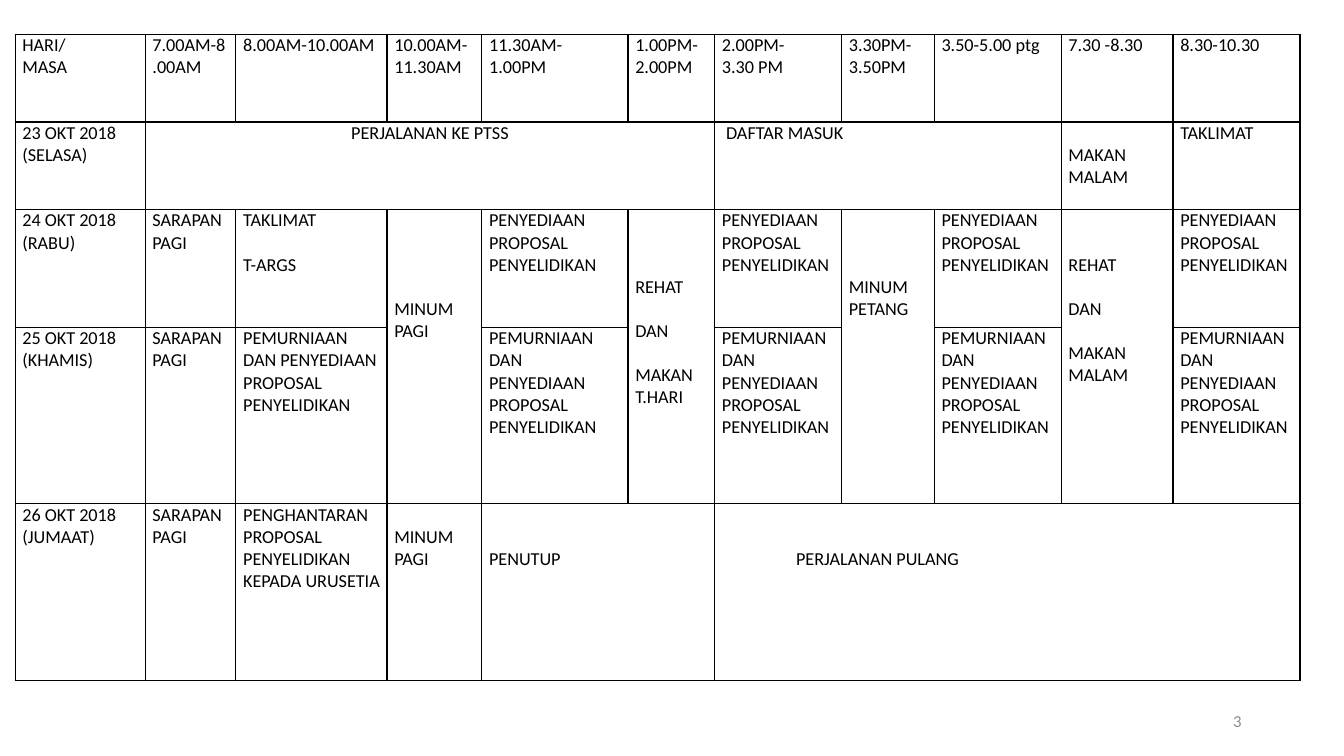
from lxml import etree
from pptx import Presentation
from pptx.dml.color import RGBColor
from pptx.enum.text import MSO_ANCHOR, PP_ALIGN
from pptx.oxml.ns import qn
from pptx.util import Pt

CENTER, RIGHT = PP_ALIGN.CENTER, PP_ALIGN.RIGHT
MIDDLE = MSO_ANCHOR.MIDDLE

COLORS = {"text": "000000", "border": "000000", "number": "8C8C8C"}
FONT = "Calibri"
SIZE = 13
LINE = 15.8  # height of one text line
INSET = 5.2

COL_WIDTHS = [92.9, 64.8, 108, 67.7, 104.4, 61.9, 90.7, 66.2, 90.7, 79.9, 90.7]
ROW_HEIGHTS = [62.6, 62.6, 84.2, 126, 126]

BREAKFAST = "SARAPAN PAGI"
PREPARE = "PENYEDIAAN PROPOSAL PENYELIDIKAN"
REFINE = "PEMURNIAAN DAN PENYEDIAAN PROPOSAL PENYELIDIKAN"

# An empty line inside a text stands for one line of spacing.
SCHEDULE = [
    ["HARI/\nMASA", "7.00AM-8.00AM", "8.00AM-10.00AM", "10.00AM-\n11.30AM",
     "11.30AM-\n1.00PM", "1.00PM-\n2.00PM", "2.00PM-\n3.30 PM",
     "3.30PM-\n3.50PM", "3.50-5.00 ptg", "7.30 -8.30", "8.30-10.30"],
    ["23 OKT 2018\n(SELASA)", "PERJALANAN KE PTSS", "", "", "", "",
     "DAFTAR MASUK", "", "", "\nMAKAN MALAM", "TAKLIMAT"],
    ["24 OKT 2018\n(RABU)", BREAKFAST, "TAKLIMAT\n\nT-ARGS",
     "\n\n\n\nMINUM PAGI", PREPARE, "\n\n\nREHAT\n\nDAN\n\nMAKAN T.HARI",
     PREPARE, "\n\n\nMINUM PETANG", PREPARE,
     "\n\nREHAT\n\nDAN\n\nMAKAN MALAM", PREPARE],
    ["25 OKT 2018\n(KHAMIS)", BREAKFAST, REFINE, "", REFINE, "", REFINE, "",
     REFINE, "", REFINE],
    ["26 OKT 2018\n(JUMAAT)", BREAKFAST,
     "PENGHANTARAN PROPOSAL PENYELIDIKAN KEPADA URUSETIA", "\nMINUM PAGI",
     "\n\nPENUTUP", "", "\n\nPERJALANAN PULANG", "", "", "", ""],
]

# (row, column): (rows, columns) covered
SPANS = {(1, 1): (1, 5), (1, 6): (1, 3), (4, 4): (1, 2), (4, 6): (1, 5)}
SPANS.update({(2, col): (2, 1) for col in (3, 5, 7, 9)})
INDENTS = {(1, 6): 3, (4, 6): 53}
CENTERED = {(1, 1)}


def style_run(r, size, color):
    r.font.name = FONT
    r.font.size = Pt(size)
    r.font.color.rgb = RGBColor.from_string(COLORS[color])


def set_borders(cell):
    tcPr = cell._tc.get_or_add_tcPr()
    for side in ("lnL", "lnR", "lnT", "lnB"):
        ln = etree.SubElement(tcPr, qn("a:" + side), w=str(Pt(1)))
        fill = etree.SubElement(ln, qn("a:solidFill"))
        etree.SubElement(fill, qn("a:srgbClr"), val=COLORS["border"])


def fill_cell(cell, text, indent, centered):
    """Write the text, turning empty lines into top margin or spacing."""
    set_borders(cell)
    cell.fill.background()
    body = text.lstrip("\n")
    cell.margin_left, cell.margin_right = Pt(INSET + indent), Pt(INSET)
    cell.margin_top = Pt(LINE * (len(text) - len(body)))
    cell.margin_bottom = 0
    tf = cell.text_frame
    tf.text = body.replace("\n\n", "\n")
    for p, block_start in zip(tf.paragraphs, gap_flags(body)):
        if block_start:
            p.space_before = Pt(LINE)
        if centered:
            p.alignment = CENTER
        for r in p.runs:
            style_run(r, SIZE, "text")


def gap_flags(body):
    """Tell for each written line whether an empty line precedes it."""
    lines = body.split("\n")
    return [i > 0 and not lines[i - 1] for i, line in enumerate(lines) if line]


def add_schedule(s, left, top):
    frame = s.shapes.add_table(len(ROW_HEIGHTS), len(COL_WIDTHS), Pt(left),
                               Pt(top), Pt(sum(COL_WIDTHS)), Pt(sum(ROW_HEIGHTS)))
    table = frame.table
    table.first_row = table.horz_banding = False
    for column, width in zip(table.columns, COL_WIDTHS):
        column.width = Pt(width)
    for row, height in zip(table.rows, ROW_HEIGHTS):
        row.height = Pt(height)
    for i, texts in enumerate(SCHEDULE):
        for j, text in enumerate(texts):
            fill_cell(table.cell(i, j), text, INDENTS.get((i, j), 0),
                      (i, j) in CENTERED)
    for (i, j), (rows, cols) in SPANS.items():
        table.cell(i, j).merge(table.cell(i + rows - 1, j + cols - 1))


def add_page_number(s, number):
    sp = s.shapes.add_textbox(Pt(678), Pt(500.5), Pt(216), Pt(28.8))
    tf = sp.text_frame
    tf.word_wrap = True
    tf.vertical_anchor = MIDDLE
    tf.text = number
    p = tf.paragraphs[0]
    p.alignment = RIGHT
    style_run(p.runs[0], 12, "number")


def main():
    prs = Presentation()
    prs.slide_width, prs.slide_height = Pt(960), Pt(540)
    s = prs.slides.add_slide(prs.slide_layouts[6])
    add_page_number(s, "3")
    add_schedule(s, 10.8, 24.5)
    prs.save("out.pptx")


if __name__ == "__main__":
    main()
